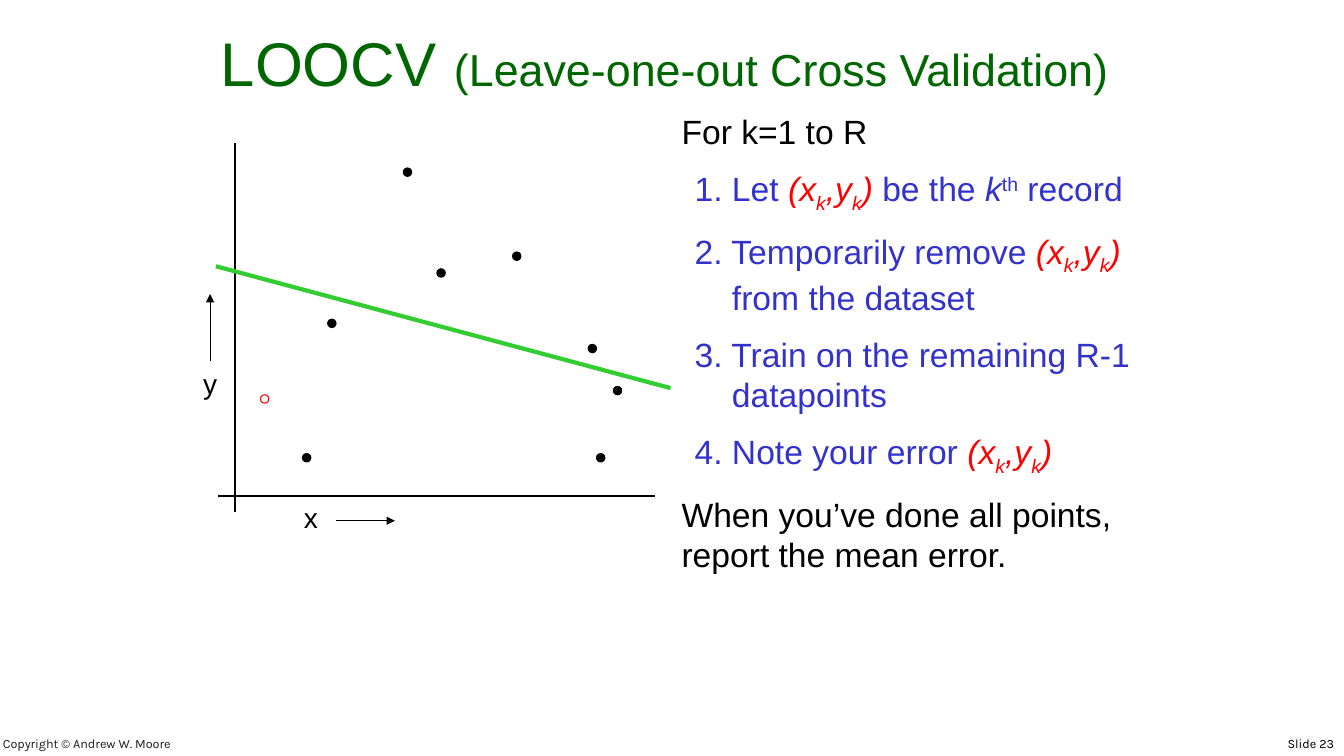
"""Build the leave-one-out cross validation slide."""
from lxml.etree import SubElement
from pptx import Presentation
from pptx.dml.color import RGBColor
from pptx.enum.shapes import MSO_CONNECTOR, MSO_SHAPE
from pptx.enum.text import MSO_ANCHOR, MSO_AUTO_SIZE, PP_ALIGN
from pptx.oxml.ns import qn
from pptx.util import Inches, Pt

BLACK = RGBColor(0x00, 0x00, 0x00)
WHITE = RGBColor(0xFF, 0xFF, 0xFF)
CHARCOAL = RGBColor(0x1C, 0x1C, 0x1C)
DARK_GREEN = RGBColor(0x00, 0x66, 0x00)
GREEN = RGBColor(0x33, 0xCC, 0x33)
BLUE = RGBColor(0x33, 0x33, 0xCC)
RED = RGBColor(0xFF, 0x00, 0x00)
UNIT = Inches(1) // 12

prs = Presentation()
prs.slide_width, prs.slide_height = Inches(13.33), Inches(7.5)
s = prs.slides.add_slide(prs.slide_layouts[1])


def add_label(text, left, top, width, height, size, font, color, align=PP_ALIGN.LEFT):
    """Add a one-line text box and return its text frame."""
    tf = s.shapes.add_textbox(left, top, width, height).text_frame
    tf.word_wrap = True
    p = tf.paragraphs[0]
    p.text, p.alignment = text, align
    p.font.size, p.font.name, p.font.color.rgb = Pt(size), font, color
    return tf


def add_line(x1, y1, x2, y2, color, width, arrow=False):
    """Add a straight line between two points of the plot grid."""
    line = s.shapes.add_connector(
        MSO_CONNECTOR.STRAIGHT, *(round(v * UNIT) for v in (x1, y1, x2, y2)))
    line.line.color.rgb, line.line.width = color, Pt(width)
    if arrow:
        SubElement(line.line._get_or_add_ln(), qn("a:tailEnd"), type="triangle")
    SubElement(line._element.spPr, qn("a:effectLst"))


footer = add_label("Copyright © Andrew W. Moore", Inches(-0.07), Inches(7.22),
                   Inches(7.4), Inches(0.28), 9, "Karla", CHARCOAL)
footer.vertical_anchor = MSO_ANCHOR.BOTTOM
add_label("Slide 23", Inches(8.11), Inches(7.25), Inches(5.22), Inches(0.25),
          9, "Karla", BLACK, PP_ALIGN.RIGHT)

title = s.shapes.title
title.left, title.top = Inches(1.93), Inches(0.2)
title.width, title.height = Inches(9.33), Inches(0.83)
tf = title.text_frame
tf.auto_size, tf.vertical_anchor = MSO_AUTO_SIZE.NONE, MSO_ANCHOR.BOTTOM
p = tf.paragraphs[0]
p.alignment = PP_ALIGN.CENTER
p.font.name, p.font.color.rgb = "Arial", DARK_GREEN
for text, size in (("LOOCV ", 44), ("(Leave-one-out Cross Validation)", 32)):
    r = p.add_run()
    r.text, r.font.size = text, Pt(size)

RECORD = [("(x", RED, True, 0), ("k", RED, True, -25), (",y", RED, True, 0),
          ("k", RED, True, -25), (")", RED, True, 0)]
STEPS = [
    (0, [("For k=1 to R", BLACK, False, 0)]),
    (1, [("1. Let ", BLUE, False, 0), *RECORD, (" be the ", BLUE, False, 0),
         ("k", BLUE, True, 0), ("th", BLUE, False, 30), (" record", BLUE, False, 0)]),
    (1, [("2. Temporarily remove ", BLUE, False, 0), *RECORD,
         (" from the dataset", BLUE, False, 0)]),
    (1, [("3. Train on the remaining R-1 datapoints", BLUE, False, 0)]),
    (1, [("4. Note your error ", BLUE, False, 0), *RECORD]),
    (0, [("When you’ve done all points, report the mean error.", BLACK, False, 0)]),
]
body = s.placeholders[1]
body.left, body.top = Inches(6.66), Inches(1.05)
body.width, body.height = Inches(4.81), Inches(4.75)
tf = body.text_frame
tf.auto_size = MSO_AUTO_SIZE.NONE
for i, (level, runs) in enumerate(STEPS):
    p = tf.add_paragraph() if i else tf.paragraphs[0]
    p.level, p.space_before = level, Pt(12)
    p.font.size, p.font.name = Pt(24), "Arial"
    pPr = p._p.get_or_add_pPr()
    pPr.set("marL", str(Inches(0.5) * level))
    pPr.set("indent", str(Inches(-0.37) * level))
    pPr.insert_element_before(pPr.makeelement(qn("a:buNone")), "a:defRPr")
    for text, color, italic, baseline in runs:
        r = p.add_run()
        r.text, r.font.color.rgb, r.font.italic = text, color, italic
        if baseline:
            r.font._element.set("baseline", str(baseline * 1000))

add_line(28, 17, 28, 61, BLACK, 1.5)
add_line(26, 59, 78, 59, BLACK, 1.5)

POINTS = [(31, 47), (36, 54), (39, 38), (48, 20), (52, 32),
          (61, 30), (71, 54), (73, 46), (70, 41)]
for i, (x, y) in enumerate(POINTS):
    sp = s.shapes.add_shape(MSO_SHAPE.OVAL, x * UNIT, y * UNIT, UNIT, UNIT)
    sp.shadow.inherit = False
    sp.fill.solid()
    sp.fill.fore_color.rgb = BLACK if i else WHITE
    sp.line.color.rgb = BLACK if i else RED
    sp.line.width = Pt(0.75)

for name, x, y in (("x", 35, 59), ("y", 23, 43)):
    add_label(name, x * UNIT, y * UNIT, 4 * UNIT, Inches(0.43), 20, "Arial", BLACK)
add_line(40, 62, 47, 62, BLACK, 0.75, arrow=True)
add_line(25, 43, 25, 35, BLACK, 0.75, arrow=True)
add_line(25.7, 31.7, 79.8, 46.2, GREEN, 3)

prs.save("out.pptx")
